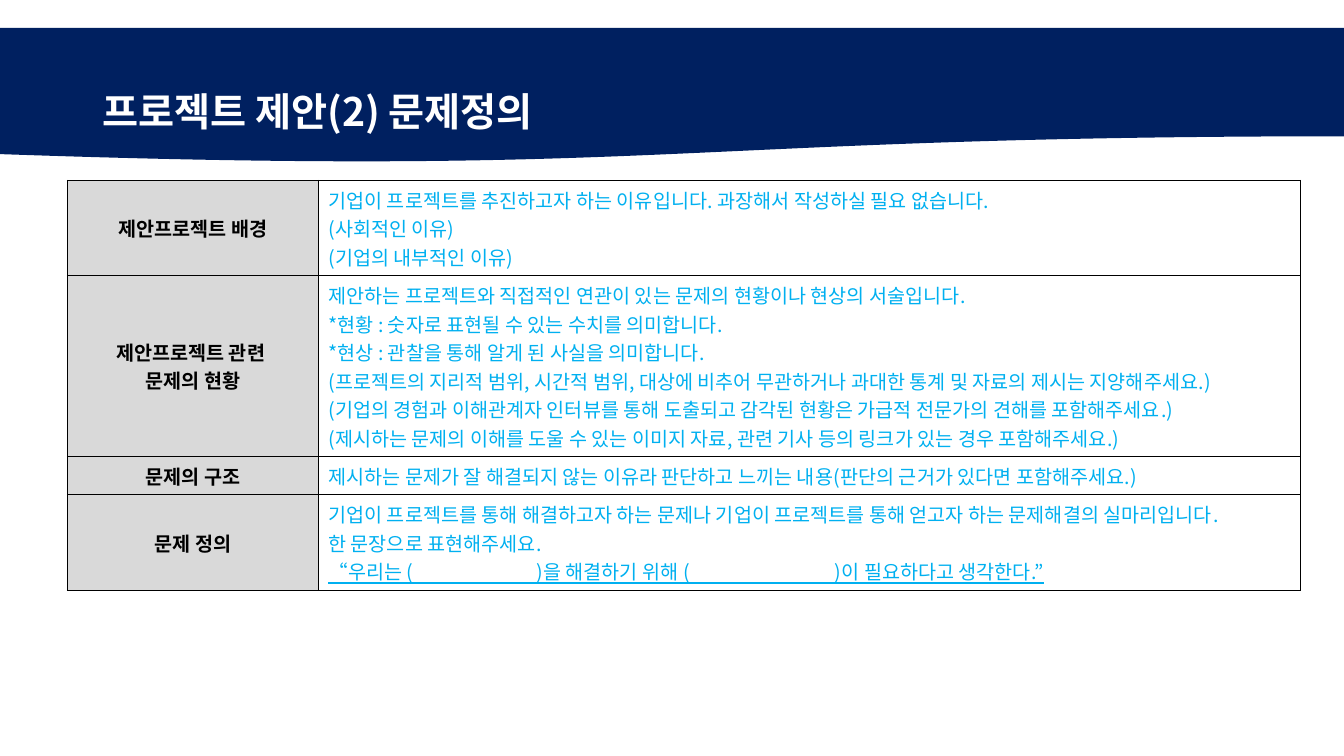
from lxml.etree import SubElement
from pptx import Presentation
from pptx.dml.color import RGBColor
from pptx.enum.shapes import MSO_SHAPE as Shape
from pptx.enum.text import MSO_ANCHOR as Anchor, PP_ALIGN as Align
from pptx.oxml.ns import qn
from pptx.util import Pt

FONT = "Noto Sans CJK KR"
COLORS = {"navy": "002060", "white": "FFFFFF", "black": "000000",
          "label": "D9D9D9", "guide": "00B0F0"}
TITLE = "프로젝트 제안(2) 문제정의"
FIRST_BLANK, SECOND_BLANK = " " * 28, " " * 33  # underlined answer spaces
SENTENCE = f"“우리는 ({FIRST_BLANK})을 해결하기 위해 ({SECOND_BLANK})이 필요하다고 생각한다.”"
ROWS = [
    (["제안프로젝트 배경"],
     ["기업이 프로젝트를 추진하고자 하는 이유입니다. 과장해서 작성하실 필요 없습니다.",
      "(사회적인 이유)",
      "(기업의 내부적인 이유)"]),
    (["제안프로젝트 관련 ", "문제의 현황"],
     ["제안하는 프로젝트와 직접적인 연관이 있는 문제의 현황이나 현상의 서술입니다.",
      "*현황 : 숫자로 표현될 수 있는 수치를 의미합니다.",
      "*현상 : 관찰을 통해 알게 된 사실을 의미합니다.",
      "(프로젝트의 지리적 범위, 시간적 범위, 대상에 비추어 무관하거나 과대한 통계 및 자료의 제시는 지양해주세요.)",
      "(기업의 경험과 이해관계자 인터뷰를 통해 도출되고 감각된 현황은 가급적 전문가의 견해를 포함해주세요.)",
      "(제시하는 문제의 이해를 도울 수 있는 이미지 자료, 관련 기사 등의 링크가 있는 경우 포함해주세요.)"]),
    (["문제의 구조"],
     ["제시하는 문제가 잘 해결되지 않는 이유라 판단하고 느끼는 내용(판단의 근거가 있다면 포함해주세요.)"]),
    (["문제 정의"],
     ["기업이 프로젝트를 통해 해결하고자 하는 문제나 기업이 프로젝트를 통해 얻고자 하는 문제해결의 실마리입니다.",
      "한 문장으로 표현해주세요.",
      SENTENCE]),
]
COLUMN_WIDTHS = [179.2, 701.8]
LINE_HEIGHT, CELL_MARGINS = 20.3, 7.2


def rgb(name):
    return RGBColor.from_string(COLORS[name])


def write(frame, lines, size, color, bold=False, align=Align.LEFT):
    frame.text = "\n".join(lines)
    for para in frame.paragraphs:
        para.alignment = align
        for span in para.runs:
            font = span.font
            font.name, font.size, font.bold = FONT, Pt(size), bold
            font.color.rgb = rgb(color)
            font.underline = True if span.text == SENTENCE else None
            SubElement(font._element, qn("a:ea"), typeface=FONT)


def style_cell(cell, fill=None):
    """Anchor the text in the middle, add black borders and an optional fill."""
    cell.vertical_anchor = Anchor.MIDDLE
    properties = cell._tc.get_or_add_tcPr()
    for side in ("lnL", "lnR", "lnT", "lnB"):
        line = SubElement(properties, qn(f"a:{side}"), w=str(Pt(1)))
        solid = SubElement(line, qn("a:solidFill"))
        SubElement(solid, qn("a:srgbClr"), val=COLORS["black"])
    if fill:
        cell.fill.solid()
        cell.fill.fore_color.rgb = rgb(fill)
    else:
        cell.fill.background()


def add_banner(slide):
    banner = slide.shapes.add_shape(
        Shape.FLOWCHART_DOCUMENT, 0, Pt(20), Pt(960), Pt(96.5))
    banner.shadow.inherit = False
    banner.fill.solid()
    banner.fill.fore_color.rgb = rgb("navy")
    banner.line.fill.background()


def add_title(slide):
    box = slide.shapes.add_textbox(Pt(66), Pt(28.75), Pt(828), Pt(104.4))
    frame = box.text_frame
    frame.word_wrap = True
    frame.vertical_anchor = Anchor.MIDDLE
    write(frame, [TITLE], 28, "white", bold=True)
    frame.paragraphs[0].line_spacing = 0.9


def add_definition_table(slide):
    heights = [CELL_MARGINS + LINE_HEIGHT * len(guide) for _, guide in ROWS]
    table = slide.shapes.add_table(
        len(ROWS), 2, Pt(48.2), Pt(128.9),
        Pt(sum(COLUMN_WIDTHS)), Pt(sum(heights))).table
    table.first_row = table.horz_banding = False
    for column, width in zip(table.columns, COLUMN_WIDTHS):
        column.width = Pt(width)
    for row, height, (label, guide) in zip(table.rows, heights, ROWS):
        row.height = Pt(height)
        label_cell, guide_cell = row.cells
        write(label_cell.text_frame, label, 14, "black", True, Align.CENTER)
        write(guide_cell.text_frame, guide, 14, "guide")
        style_cell(label_cell, "label")
        style_cell(guide_cell)


def main():
    deck = Presentation()
    deck.slide_width, deck.slide_height = Pt(960), Pt(540)
    slide = deck.slides.add_slide(deck.slide_layouts[6])
    add_banner(slide)
    add_title(slide)
    add_definition_table(slide)
    deck.save("out.pptx")


if __name__ == "__main__":
    main()
